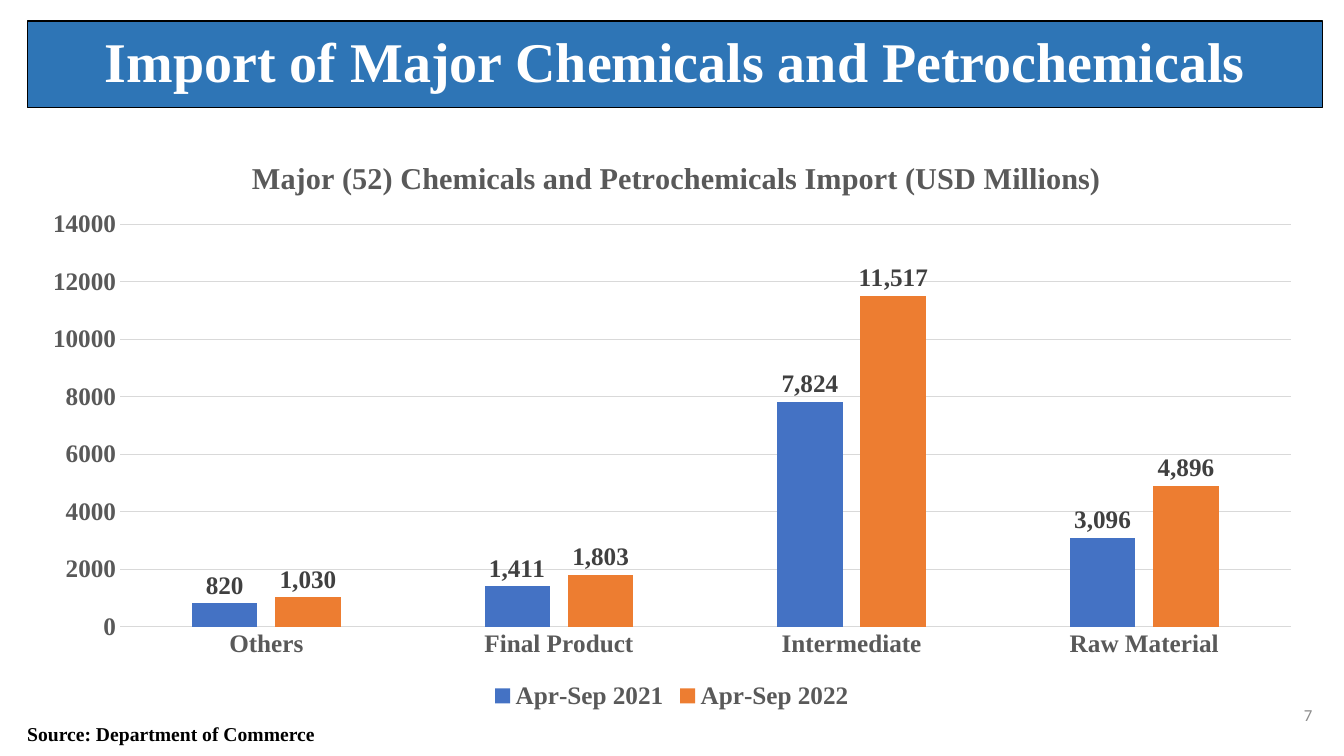
from dataclasses import dataclass

from lxml.etree import SubElement
from pptx import Presentation
from pptx.chart.data import CategoryChartData
from pptx.dml.color import RGBColor
from pptx.enum.chart import XL_CHART_TYPE, XL_LABEL_POSITION, XL_LEGEND_POSITION, XL_TICK_MARK
from pptx.enum.text import MSO_ANCHOR, MSO_AUTO_SIZE, PP_ALIGN
from pptx.oxml import parse_xml
from pptx.oxml.ns import nsdecls, qn
from pptx.util import Pt


@dataclass(frozen=True)
class Theme:
    serif: str = "Times New Roman"
    sans: str = "Calibri"
    black: str = "000000"
    white: str = "FFFFFF"
    band: str = "2E75B6"
    label: str = "404040"
    axis: str = "595959"
    page: str = "8C8C8C"
    grid: str = "D9D9D9"
    bars: tuple = ("4472C4", "ED7D31")
    head: float = 40
    sub: float = 21.6
    chart: float = 18
    note: float = 14
    small: float = 12


THEME = Theme()
GROUPS = ("Others", "Final Product", "Intermediate", "Raw Material")
TERMS = {
    "Apr-Sep 2021": (820, 1411, 7824, 3096),
    "Apr-Sep 2022": (1030, 1803, 11517, 4896),
}


def style(font, size, color, face=THEME.serif, bold=True):
    font.name = face
    font.size = Pt(size)
    font.bold = bold
    font.color.rgb = RGBColor.from_string(color)


def paint(fill, color):
    fill.solid()
    fill.fore_color.rgb = RGBColor.from_string(color)


def rule(line, color, width):
    paint(line.fill, color)
    line.width = Pt(width)


def place(shape, left, top, width, height):
    shape.left, shape.top = Pt(left), Pt(top)
    shape.width, shape.height = Pt(width), Pt(height)


def write(frame, text, anchor, align):
    frame.word_wrap = True
    frame.auto_size = MSO_AUTO_SIZE.NONE
    frame.vertical_anchor = anchor
    line = frame.paragraphs[0]
    line.alignment = align
    run = line.add_run()
    run.text = text
    return run.font


def add_title(slide, text):
    title = slide.shapes.title
    place(title, 19.44, 15, 925.2, 62)
    paint(title.fill, THEME.band)
    rule(title.line, THEME.black, 1)
    font = write(title.text_frame, text, MSO_ANCHOR.MIDDLE, PP_ALIGN.CENTER)
    style(font, THEME.head, THEME.white)
    title.text_frame.paragraphs[0].line_spacing = 0.9


def add_note(slide, text):
    box = slide.shapes.add_textbox(Pt(19.44), Pt(510.5), Pt(668), Pt(22.3))
    frame = box.text_frame
    frame.margin_left = frame.margin_right = 0
    frame.margin_top = frame.margin_bottom = 0
    font = write(frame, text, MSO_ANCHOR.BOTTOM, PP_ALIGN.LEFT)
    style(font, THEME.note, THEME.black)


def add_page(slide, text):
    box = slide.shapes.add_textbox(Pt(782.6), Pt(496), Pt(162), Pt(28.8))
    font = write(box.text_frame, text, MSO_ANCHOR.MIDDLE, PP_ALIGN.RIGHT)
    style(font, THEME.small, THEME.page, THEME.sans, False)


def set_spot(node, index, **parts):
    for old in node.findall(qn("c:layout")):
        node.remove(old)
    spot = parse_xml(f"<c:layout {nsdecls('c')}><c:manualLayout/></c:layout>")
    for tag, value in parts.items():
        SubElement(spot[0], qn(f"c:{tag}"), val=str(value))
    node.insert(index, spot)


def set_axes(chart):
    for axis in (chart.category_axis, chart.value_axis):
        axis.major_tick_mark = axis.minor_tick_mark = XL_TICK_MARK.NONE
        style(axis.tick_labels.font, THEME.chart, THEME.axis)
    chart.category_axis.has_major_gridlines = False
    rule(chart.category_axis.format.line, THEME.grid, 0.75)
    value = chart.value_axis
    value.minimum_scale, value.maximum_scale, value.major_unit = 0, 14000, 2000
    value.tick_labels.number_format = "General"
    value.tick_labels.number_format_is_linked = False
    value.format.line.fill.background()
    rule(value.major_gridlines.format.line, THEME.grid, 0.75)


def set_bars(plot):
    plot.gap_width = 219
    plot.overlap = -27
    plot.vary_by_categories = False
    for term, color in zip(plot.series, THEME.bars):
        paint(term.format.fill, color)
        labels = term.data_labels
        labels.show_value = True
        labels.number_format = "#,##0"
        labels.number_format_is_linked = False
        labels.position = XL_LABEL_POSITION.OUTSIDE_END
        style(labels.font, THEME.chart, THEME.label)


def add_bars(slide, text):
    data = CategoryChartData()
    data.categories = GROUPS
    for name, values in TERMS.items():
        data.add_series(name, values)
    chart = slide.shapes.add_chart(
        XL_CHART_TYPE.COLUMN_CLUSTERED,
        Pt(19.44), Pt(92.9), Pt(920.9), Pt(417.6), data).chart
    style(chart.font, THEME.chart, THEME.black)
    chart.has_title = True
    run = chart.chart_title.text_frame.paragraphs[0].add_run()
    run.text = text
    style(run.font, THEME.sub, THEME.axis)
    chart.has_legend = True
    chart.legend.position = XL_LEGEND_POSITION.BOTTOM
    chart.legend.include_in_layout = False
    style(chart.legend.font, THEME.chart, THEME.axis)
    set_axes(chart)
    set_bars(chart.plots[0])
    root = chart.element
    set_spot(root.xpath(".//c:chart/c:title")[0], 1,
             xMode="edge", yMode="edge", x=0.17, y=0.04)
    set_spot(root.xpath(".//c:plotArea")[0], 0, layoutTarget="inner",
             xMode="edge", yMode="edge", x=0.072, y=0.161, w=0.908, h=0.689)


def main():
    deck = Presentation()
    deck.slide_width, deck.slide_height = Pt(960), Pt(540)
    slide = deck.slides.add_slide(deck.slide_layouts[5])
    add_note(slide, "Source: Department of Commerce")
    add_title(slide, "Import of Major Chemicals and Petrochemicals")
    add_page(slide, "7")
    add_bars(slide, "Major (52) Chemicals and Petrochemicals Import (USD Millions)")
    deck.save("out.pptx")


if __name__ == "__main__":
    main()
